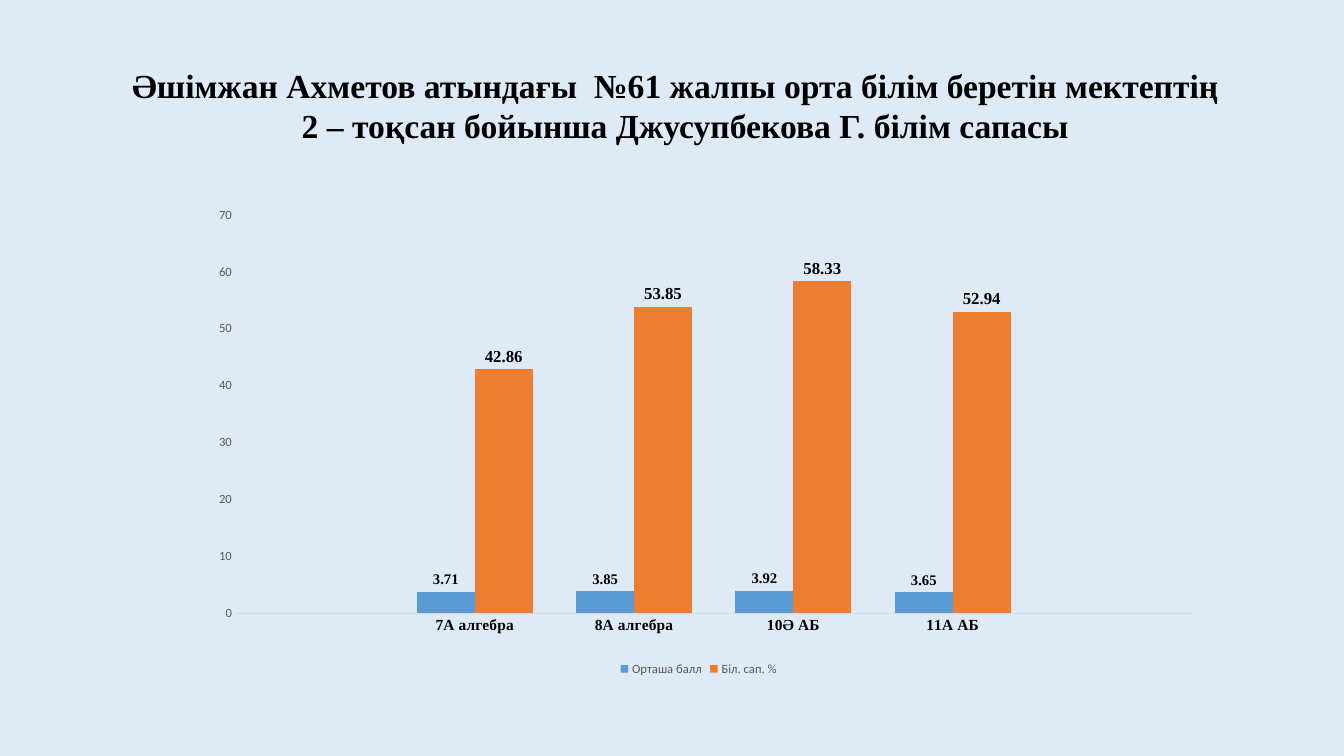
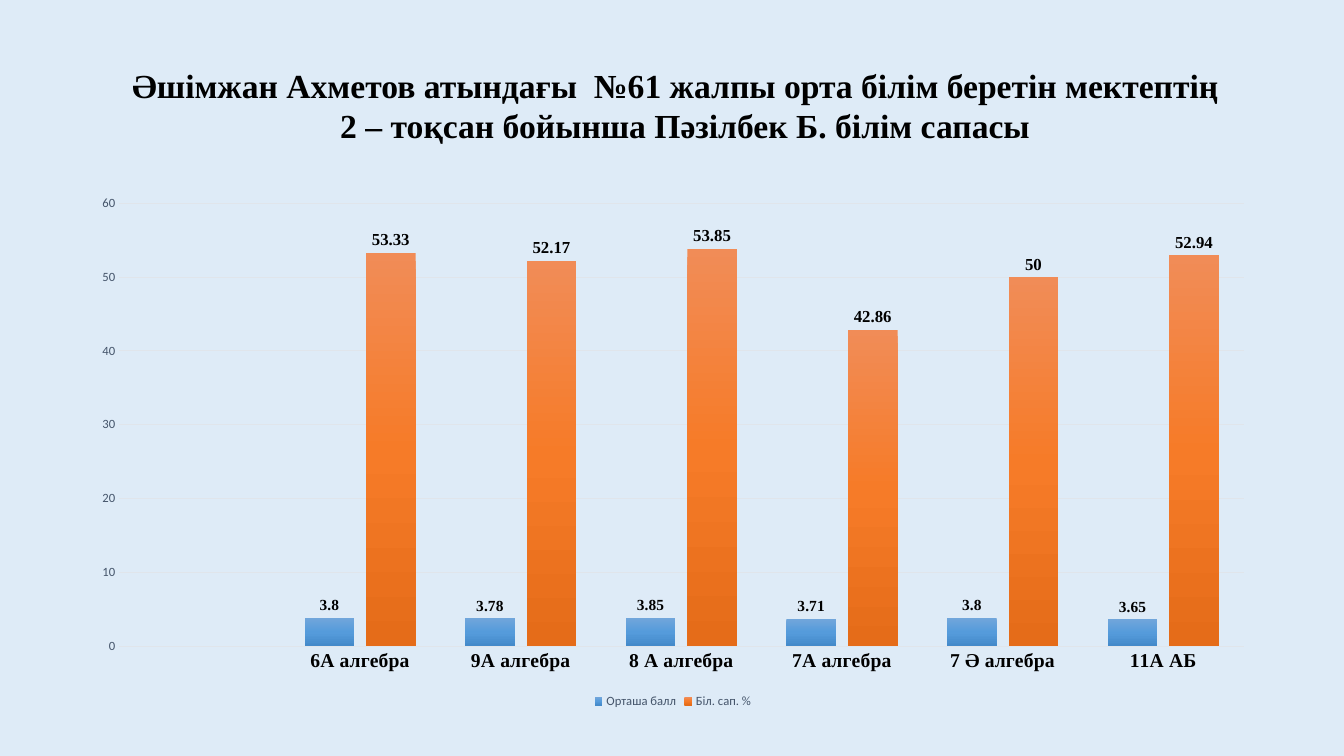
from dataclasses import dataclass
from typing import Any, Optional

import lxml.etree
import pptx
import pptx.chart.chart
import pptx.chart.data
import pptx.chart.series
import pptx.dml.color
import pptx.enum.chart
import pptx.enum.text
import pptx.oxml.ns
import pptx.slide
import pptx.util

RGBColor = pptx.dml.color.RGBColor
BACKGROUND = RGBColor(0xDE, 0xEB, 0xF7)
BLACK = RGBColor(0x00, 0x00, 0x00)
GRAY = RGBColor(0x59, 0x59, 0x59)
SLATE = RGBColor(0x44, 0x54, 0x6A)
AXIS_GRAY = RGBColor(0xD9, 0xD9, 0xD9)
AXIS_SLATE = RGBColor(0xE0, 0xE5, 0xEB)
BLUE = (RGBColor(0x5B, 0x9B, 0xD5),)
ORANGE = (RGBColor(0xED, 0x7D, 0x31),)
BLUE_SHADES = (
    RGBColor(0x71, 0xA6, 0xDB),
    RGBColor(0x55, 0x9B, 0xDB),
    RGBColor(0x44, 0x8A, 0xCA),
)
ORANGE_SHADES = (
    RGBColor(0xF1, 0x8C, 0x57),
    RGBColor(0xF6, 0x7B, 0x28),
    RGBColor(0xE5, 0x6C, 0x19),
)

SERIF = "Times New Roman"
SANS = "Calibri"
EMU_PER_PX = 9144
SLIDE_SIZE = (1333, 750)
TITLE_BOX = (121, 59, 1117, 91)
TITLE_ONLY_LAYOUT = 5
SCHOOL = "Әшімжан Ахметов атындағы  №61 жалпы орта білім беретін мектептің"


@dataclass(frozen=True)
class Measure:
    name: str
    values: tuple[Optional[float], ...]
    colors: tuple[RGBColor, ...]
    label_size: float


@dataclass(frozen=True)
class QualitySlide:
    teacher: str
    box: tuple[int, int, int, int]
    categories: tuple[str, ...]
    measures: tuple[Measure, ...]
    category_size: int
    text_color: RGBColor
    line_color: RGBColor
    maximum: int
    gap_width: int
    overlap: int
    gridlines: bool
    plot_layout: Optional[dict[str, float]] = None


QUALITY_SLIDES = (
    QualitySlide(
        teacher="Джусупбекова Г.",
        box=(194, 199, 998, 476),
        categories=("", "7А алгебра", "8А алгебра", "10Ә АБ", "11А АБ", ""),
        measures=(
            Measure("Орташа балл", (None, 3.71, 3.85, 3.92, 3.65, None), BLUE, 10.5),
            Measure("Біл. сап. %", (None, 42.86, 53.85, 58.33, 52.94, None), ORANGE, 12),
        ),
        category_size=11,
        text_color=GRAY,
        line_color=AXIS_GRAY,
        maximum=70,
        gap_width=75,
        overlap=0,
        gridlines=False,
        plot_layout={"x": 0.04, "y": 0.03, "w": 0.95, "h": 0.83},
    ),
    QualitySlide(
        teacher="Пәзілбек Б.",
        box=(78, 184, 1179, 523),
        categories=(
            "", "6А алгебра", "9А алгебра", "8 А алгебра",
            "7А алгебра", "7 Ә алгебра", "11А АБ",
        ),
        measures=(
            Measure("Орташа балл", (None, 3.8, 3.78, 3.85, 3.71, 3.8, 3.65), BLUE_SHADES, 11),
            Measure(
                "Біл. сап. %",
                (None, 53.33, 52.17, 53.85, 42.86, 50, 52.94),
                ORANGE_SHADES,
                12,
            ),
        ),
        category_size=14,
        text_color=SLATE,
        line_color=AXIS_SLATE,
        maximum=60,
        gap_width=100,
        overlap=-24,
        gridlines=True,
    ),
)


def px(length: int) -> pptx.util.Emu:
    return pptx.util.Emu(length * EMU_PER_PX)


def set_attributes(target: Any, values: dict[str, Any]) -> None:
    for name, value in values.items():
        setattr(target, name, value)


def set_font(font: Any, name: str, size: float, color: RGBColor, bold: bool = False) -> None:
    set_attributes(font, {"name": name, "size": pptx.util.Pt(size), "bold": bold})
    font.color.rgb = color


def set_line(line: Any, color: RGBColor) -> None:
    line.color.rgb = color
    line.width = pptx.util.Pt(0.75)


def add_title(slide: pptx.slide.Slide, teacher: str) -> None:
    title = slide.shapes.title
    left, top, width, height = map(px, TITLE_BOX)
    set_attributes(title, {"left": left, "top": top, "width": width, "height": height})
    text_frame = title.text_frame
    text_frame.text = f"{SCHOOL}\n2 – тоқсан бойынша {teacher} білім сапасы"
    set_attributes(text_frame, {
        "word_wrap": True,
        "auto_size": pptx.enum.text.MSO_AUTO_SIZE.NONE,
        "vertical_anchor": pptx.enum.text.MSO_ANCHOR.TOP,
    })
    alignments = (pptx.enum.text.PP_ALIGN.LEFT, pptx.enum.text.PP_ALIGN.CENTER)
    for paragraph, alignment in zip(text_frame.paragraphs, alignments):
        paragraph.alignment = alignment
        set_font(paragraph.font, SERIF, 24, BLACK, bold=True)


def fill_series(series: pptx.chart.series.BarSeries, colors: tuple[RGBColor, ...]) -> None:
    fill = series.format.fill
    if len(colors) == 1:
        fill.solid()
        fill.fore_color.rgb = colors[0]
        return
    fill.gradient()
    fill.gradient_angle = 270
    qn = pptx.oxml.ns.qn
    stops = next(series.format._element.iter(qn("a:gsLst")))
    for stop in list(stops):
        stops.remove(stop)
    for index, color in enumerate(colors):
        position = str(index * 100000 // (len(colors) - 1))
        stop = lxml.etree.SubElement(stops, qn("a:gs"), pos=position)
        lxml.etree.SubElement(stop, qn("a:srgbClr"), val=str(color))


def set_plot_layout(chart: pptx.chart.chart.Chart, fractions: dict[str, float]) -> None:
    qn = pptx.oxml.ns.qn
    plot_area = next(chart._chartSpace.iter(qn("c:plotArea")))
    for old_layout in plot_area.findall(qn("c:layout")):
        plot_area.remove(old_layout)
    layout = lxml.etree.Element(qn("c:layout"))
    plot_area.insert(0, layout)
    manual = lxml.etree.SubElement(layout, qn("c:manualLayout"))
    settings = {"layoutTarget": "inner", "xMode": "edge", "yMode": "edge", **fractions}
    for name, value in settings.items():
        lxml.etree.SubElement(manual, qn(f"c:{name}"), val=str(value))


def format_axes(chart: pptx.chart.chart.Chart, content: QualitySlide) -> None:
    no_tick = pptx.enum.chart.XL_TICK_MARK.NONE
    ticks = {"major_tick_mark": no_tick, "minor_tick_mark": no_tick}
    category_axis, value_axis = chart.category_axis, chart.value_axis
    set_attributes(category_axis, {**ticks, "has_major_gridlines": False})
    set_font(category_axis.tick_labels.font, SERIF, content.category_size, BLACK, bold=True)
    set_line(category_axis.format.line, content.line_color)
    set_attributes(value_axis, {
        **ticks,
        "minimum_scale": 0,
        "maximum_scale": content.maximum,
        "major_unit": 10,
        "has_major_gridlines": content.gridlines,
    })
    set_font(value_axis.tick_labels.font, SANS, 9, content.text_color)
    value_axis.format.line.fill.background()
    if content.gridlines:
        set_line(value_axis.major_gridlines.format.line, content.line_color)


def add_quality_chart(slide: pptx.slide.Slide, content: QualitySlide) -> None:
    chart_data = pptx.chart.data.CategoryChartData()
    chart_data.categories = content.categories
    for measure in content.measures:
        chart_data.add_series(measure.name, measure.values)
    chart = slide.shapes.add_chart(
        pptx.enum.chart.XL_CHART_TYPE.COLUMN_CLUSTERED,
        *map(px, content.box),
        chart_data,
    ).chart
    set_font(chart.font, SANS, 10, BLACK)
    set_attributes(chart, {"has_title": False, "has_legend": True})
    set_attributes(chart.legend, {
        "position": pptx.enum.chart.XL_LEGEND_POSITION.BOTTOM,
        "include_in_layout": False,
    })
    set_font(chart.legend.font, SANS, 9, content.text_color)
    format_axes(chart, content)
    plot = chart.plots[0]
    set_attributes(plot, {
        "gap_width": content.gap_width,
        "overlap": content.overlap,
        "vary_by_categories": False,
    })
    for series, measure in zip(plot.series, content.measures):
        fill_series(series, measure.colors)
        labels = series.data_labels
        set_attributes(labels, {
            "show_value": True,
            "position": pptx.enum.chart.XL_LABEL_POSITION.OUTSIDE_END,
        })
        set_font(labels.font, SERIF, measure.label_size, BLACK, bold=True)
    if content.plot_layout:
        set_plot_layout(chart, content.plot_layout)


def main() -> None:
    presentation = pptx.Presentation()
    presentation.slide_width, presentation.slide_height = map(px, SLIDE_SIZE)
    background = presentation.slide_master.background.fill
    background.solid()
    background.fore_color.rgb = BACKGROUND
    for content in QUALITY_SLIDES:
        slide = presentation.slides.add_slide(presentation.slide_layouts[TITLE_ONLY_LAYOUT])
        add_title(slide, content.teacher)
        add_quality_chart(slide, content)
    presentation.save("out.pptx")


if __name__ == "__main__":
    main()
